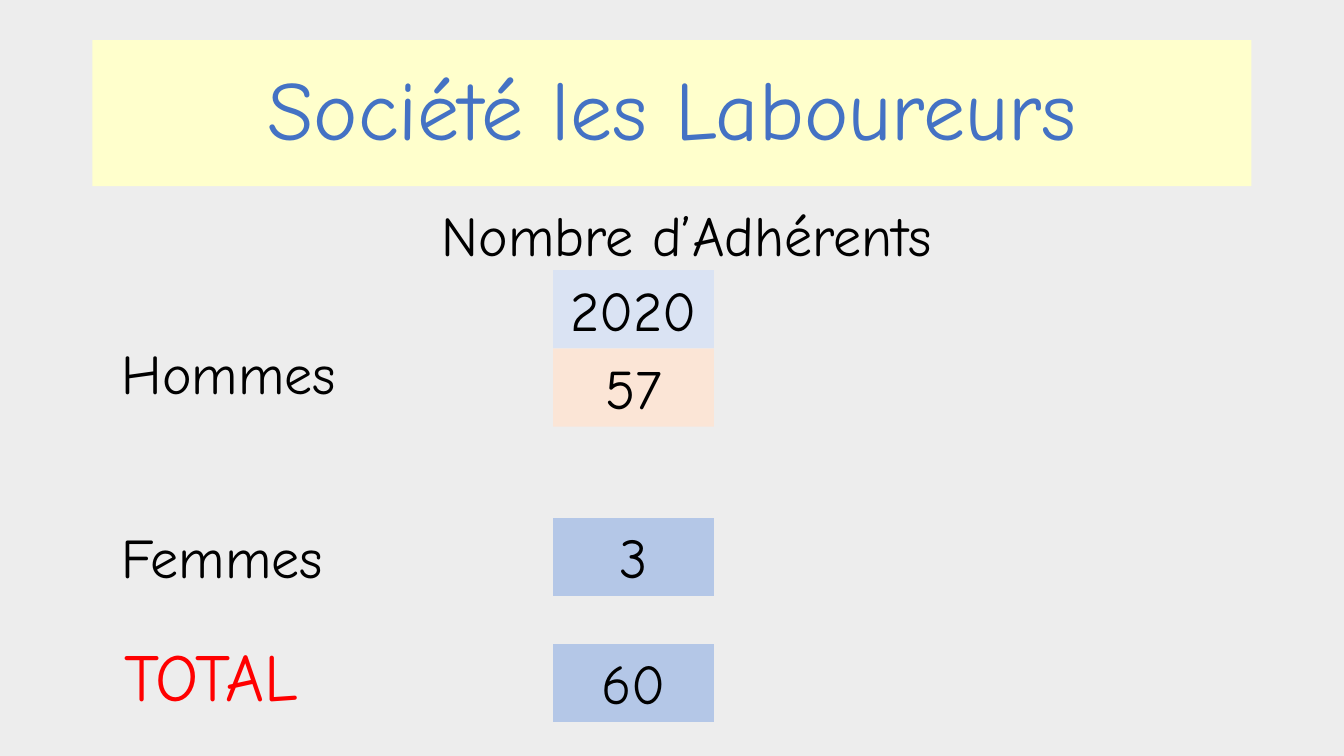
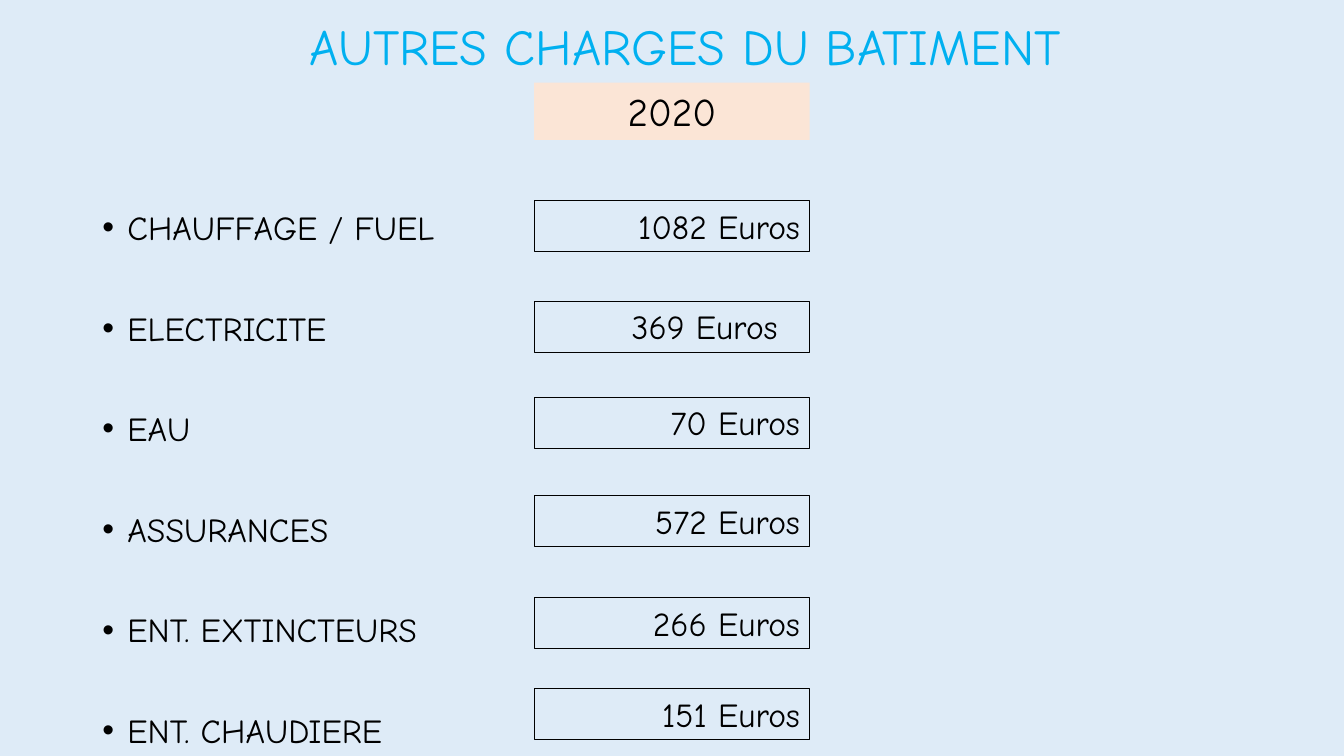
import pptx
import pptx.dml.color
import pptx.enum.shapes
import pptx.enum.text
import pptx.oxml
import pptx.util
from lxml import etree

Pt = pptx.util.Pt
ALIGN = pptx.enum.text.PP_ALIGN
ANCHOR = pptx.enum.text.MSO_ANCHOR
FONT = "Comic Neue"
COLORS = {
    "gray": "EDEDED",
    "sky": "DEEBF7",
    "cream": "FFFFCC",
    "peach": "FBE5D6",
    "pale_blue": "DAE3F3",
    "mid_blue": "B4C7E7",
    "title_blue": "4472C4",
    "title_cyan": "00B0F0",
    "red": "FF0000",
    "black": "000000",
}
INSET = 7.2
CHARGES = [
    ("CHAUFFAGE / FUEL", "1082 Euros", 143.3, INSET),
    ("ELECTRICITE", "369 Euros", 215.3, 23),
    ("EAU", "70 Euros", 283.7, INSET),
    ("ASSURANCES", "572 Euros", 354.2, INSET),
    ("ENT. EXTINCTEURS", "266 Euros", 427, INSET),
    ("ENT. CHAUDIERE", "151 Euros", 491.8, INSET),
]


def rgb(name):
    return pptx.dml.color.RGBColor.from_string(COLORS[name])


def format_paragraph(paragraph, size, color, align):
    paragraph.alignment = align
    for run in paragraph.runs:
        run.font.name = FONT
        run.font.size = Pt(size)
        run.font.color.rgb = rgb(color)


def add_text(slide, box, text, size, color="black", align=ALIGN.LEFT, anchor=ANCHOR.TOP):
    shape = slide.shapes.add_textbox(*map(Pt, box))
    write_text(shape, text, size, color, align, anchor)
    return shape


def write_text(shape, text, size, color, align, anchor):
    frame = shape.text_frame
    frame.word_wrap = True
    frame.vertical_anchor = anchor
    frame.text = text
    for paragraph in frame.paragraphs:
        format_paragraph(paragraph, size, color, align)


def add_panel(slide, box, text, size, fill=None, line=None, align=ALIGN.CENTER):
    kind = pptx.enum.shapes.MSO_SHAPE.RECTANGLE
    shape = slide.shapes.add_shape(kind, *map(Pt, box))
    shape.shadow.inherit = False
    if fill:
        shape.fill.solid()
        shape.fill.fore_color.rgb = rgb(fill)
    else:
        shape.fill.background()
    if line:
        shape.line.color.rgb = rgb(line)
        shape.line.width = Pt(0.75)
    else:
        shape.line.fill.background()
    write_text(shape, text, size, "black", align, ANCHOR.TOP)
    return shape


def add_title(slide, box, text, size, color, fill=None):
    title = add_text(slide, box, text, size, color, ALIGN.CENTER, ANCHOR.MIDDLE)
    title.text_frame.paragraphs[0].line_spacing = 0.9
    if fill:
        title.fill.solid()
        title.fill.fore_color.rgb = rgb(fill)


def add_slide(presentation, background):
    slide = presentation.slides.add_slide(presentation.slide_layouts[6])
    slide.background.fill.solid()
    slide.background.fill.fore_color.rgb = rgb(background)
    return slide


def add_bullet(paragraph, indent):
    properties = paragraph._p.get_or_add_pPr()
    properties.set("marL", str(Pt(indent)))
    properties.set("indent", str(-Pt(indent)))
    font = etree.SubElement(properties, pptx.oxml.ns.qn("a:buFont"))
    font.set("typeface", "Arial")
    bullet = etree.SubElement(properties, pptx.oxml.ns.qn("a:buChar"))
    bullet.set("char", "•")


def add_charge_labels(slide, box, labels):
    body = add_text(slide, box, "\n".join(labels), 24)
    for paragraph in body.text_frame.paragraphs:
        paragraph.line_spacing = Pt(26)
        paragraph.space_after = Pt(45.9)
        add_bullet(paragraph, 18)


def add_charge_amounts(slide, left, width):
    for _, amount, top, inset in CHARGES:
        panel = add_panel(slide, (left, top, width, 36.4), amount, 24,
                          line="black", align=ALIGN.RIGHT)
        panel.text_frame.margin_right = Pt(inset)


def add_member_counts(slide, left, width, height):
    counts = [
        ("2020", 193, "pale_blue"),
        ("57", 249, "peach"),
        ("3", 370, "mid_blue"),
        ("60", 460, "mid_blue"),
    ]
    for text, top, fill in counts:
        add_panel(slide, (left, top, width, height), text, 40, fill)


def build_members(presentation):
    slide = add_slide(presentation, "gray")
    add_title(slide, (66, 28.6, 828, 104.4), "Société les Laboureurs", 60,
              "title_blue", "cream")
    add_text(slide, (189.4, 139.7, 602.6, 55.7), "Nombre d’Adhérents", 40,
             align=ALIGN.CENTER)
    add_text(slide, (80, 238.5, 174, 55.7), "Hommes", 40)
    add_text(slide, (80, 370, 174, 55.7), "Femmes", 40)
    add_text(slide, (82, 449.3, 194, 65.5), "TOTAL", 48, "red")
    add_member_counts(slide, 395, 115, 55.7)


def build_charges(presentation):
    slide = add_slide(presentation, "sky")
    add_title(slide, (85, 2, 808.6, 66), "AUTRES CHARGES DU BATIMENT", 36, "title_cyan")
    add_charge_labels(slide, (66, 147, 310, 393), [charge[0] for charge in CHARGES])
    left, width = 381.6, 196.8
    add_charge_amounts(slide, left, width)
    add_panel(slide, (left, 59, width, 41), "2020", 28, "peach")


def main():
    presentation = pptx.Presentation()
    presentation.slide_width = Pt(960)
    presentation.slide_height = Pt(540)
    build_members(presentation)
    build_charges(presentation)
    presentation.save("out.pptx")


if __name__ == "__main__":
    main()
